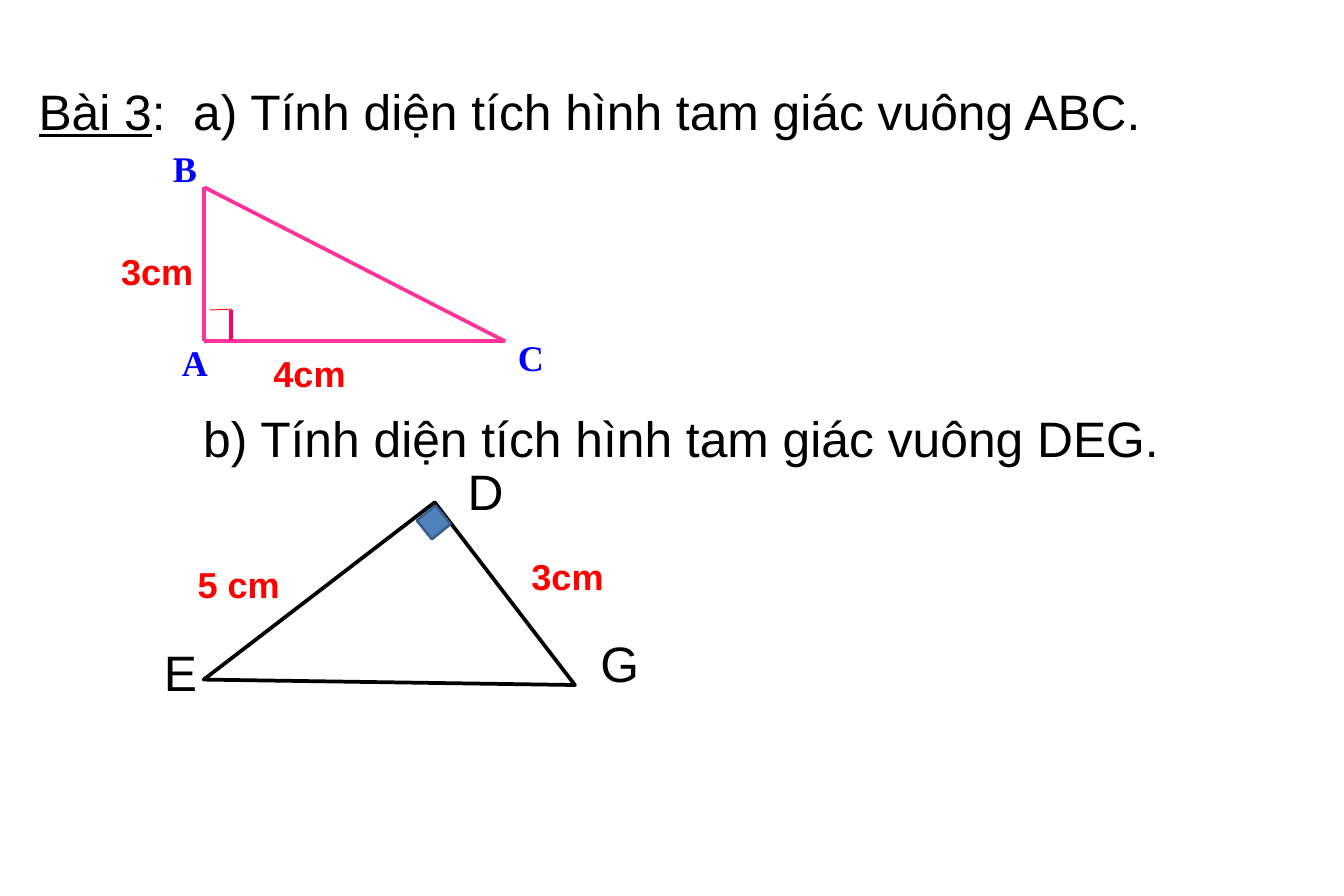
import pptx
import pptx.util
import pptx.dml.color
import pptx.enum.shapes
import pptx.enum.text
from dataclasses import dataclass
from lxml import etree

Inches = pptx.util.Inches
Align = pptx.enum.text.PP_ALIGN
Anchor = pptx.enum.text.MSO_ANCHOR
Preset = pptx.enum.shapes.MSO_SHAPE


@dataclass(frozen=True)
class Theme:
    sans: str = "Arial"
    serif: str = "Times New Roman"
    text_size: int = 40
    label_size: int = 29
    black: str = "000000"
    white: str = "FFFFFF"
    vertex: str = "0000FF"
    measure: str = "FF0000"
    side: str = "FF3399"
    corner: str = "FF0066"
    diamond: str = "4F81BD"
    diamond_edge: str = "3A5F8C"
    side_width: float = 3
    edge_width: float = 2
    thin_width: float = 0.75


THEME = Theme()

HEADING = [("Bài 3", {"underline": True}), (":", {}), (" ", {"spacing": 11}),
           ("a) Tính diện tích hình tam giác vuông ABC.", {})]
HEADING_BOX = (0.33, 0.85, 14.08, 0.77)
PART_B = "b) Tính diện tích hình tam giác vuông DEG."
PART_B_BOX = (2.17, 4.5, 12.17, 0.77)

A, B, C = (2.28, 3.81), (2.28, 2.09), (5.64, 3.81)
ABC_SIDES = [(B, A), (A, C), (B, C)]
ABC_LABELS = [("B", (1.83, 1.59), Align.LEFT), ("A", (1.93, 3.75), Align.CENTER),
              ("C", (5.68, 3.69), Align.CENTER)]
ABC_LABEL_SIZE = (0.49, 0.59)
RIGHT_ANGLE = [((2.58, 3.46), (2.58, 3.79), THEME.corner, THEME.side_width),
               ((2.59, 3.45), (2.34, 3.46), THEME.measure, THEME.thin_width)]

DEG_LABELS = [("G", (6.56, 7.12, 0.44, 0.55), 0.14), ("E", (1.73, 7.21, 0.44, 0.58), 0.1),
              ("D", (5.09, 5.12, 0.66, 0.72), 0.1)]
DEG_SHAPES = [
    (Preset.RIGHT_TRIANGLE, (2.72, 6.33, 3.25, 2.57), 142.5,
     THEME.white, THEME.black, THEME.side_width),
    (Preset.DIAMOND, (4.65, 5.64, 0.38, 0.38), 5.9,
     THEME.diamond, THEME.diamond_edge, THEME.edge_width),
]
MEASURES = [("4cm", (2.83, 3.79, 1.25, 0.75)), ("3cm", (1.17, 2.66, 1.17, 0.72)),
            ("5 cm", (2.08, 6.16, 1.17, 0.72)), ("3cm", (5.75, 6.07, 1.17, 0.72))]


def rgb(color):
    return pptx.dml.color.RGBColor.from_string(color)


def add_span(para, text, size=THEME.text_size, color=THEME.black, font=THEME.sans,
             bold=False, underline=False, spacing=0):
    span = para.add_run()
    span.text = text
    span.font.size = pptx.util.Pt(size)
    span.font.color.rgb = rgb(color)
    span.font.name = font
    span.font.bold = bold
    span.font.underline = underline
    if spacing:
        span.font._element.set("spc", str(spacing * 100))


def set_frame(frame, anchor=Anchor.TOP, align=Align.LEFT, inset=0.1):
    frame.word_wrap = True
    frame.auto_size = pptx.enum.text.MSO_AUTO_SIZE.NONE
    frame.vertical_anchor = anchor
    frame.margin_left = frame.margin_right = Inches(inset)
    frame.margin_top = frame.margin_bottom = Inches(inset / 2)
    para = frame.paragraphs[0]
    para.alignment = align
    return para


def add_text(shapes, text, place, anchor=Anchor.TOP, align=Align.LEFT, inset=0.1, **style):
    box = shapes.add_textbox(*map(Inches, place))
    add_span(set_frame(box.text_frame, anchor, align, inset), text, **style)


def add_line(shapes, start, end, color, width):
    line = shapes.add_connector(pptx.enum.shapes.MSO_CONNECTOR.STRAIGHT,
                                *map(Inches, start + end))
    line.line.color.rgb = rgb(color)
    line.line.width = pptx.util.Pt(width)
    etree.SubElement(line._element.spPr, pptx.oxml.ns.qn("a:effectLst"))


def add_figure(shapes, preset, place, rotation, fill, edge, width):
    figure = shapes.add_shape(preset, *map(Inches, place))
    figure.rotation = rotation
    figure.shadow.inherit = False
    figure.fill.solid()
    figure.fill.fore_color.rgb = rgb(fill)
    figure.line.color.rgb = rgb(edge)
    figure.line.width = pptx.util.Pt(width)


def add_heading(page):
    title = page.shapes.title
    title.left, title.top, title.width, title.height = map(Inches, HEADING_BOX)
    para = set_frame(title.text_frame)
    for text, style in HEADING:
        add_span(para, text, **style)


def add_triangle_abc(page):
    group = page.shapes.add_group_shape()
    for start, end in ABC_SIDES:
        add_line(group.shapes, start, end, THEME.side, THEME.side_width)
    for text, corner, align in ABC_LABELS:
        add_text(group.shapes, text, corner + ABC_LABEL_SIZE, align=align, bold=True,
                 size=THEME.label_size, color=THEME.vertex, font=THEME.serif)
    for mark in RIGHT_ANGLE:
        add_line(page.shapes, *mark)


def add_triangle_deg(page):
    for figure in DEG_SHAPES:
        add_figure(page.shapes, *figure)
    for text, place, inset in DEG_LABELS:
        add_text(page.shapes, text, place, anchor=Anchor.MIDDLE, align=Align.CENTER,
                 inset=inset)


def main():
    deck = pptx.Presentation()
    deck.slide_width, deck.slide_height = Inches(15), Inches(10)
    page = deck.slides.add_slide(deck.slide_layouts[5])
    add_heading(page)
    add_triangle_abc(page)
    add_text(page.shapes, PART_B, PART_B_BOX)
    add_triangle_deg(page)
    for text, place in MEASURES:
        add_text(page.shapes, text, place, anchor=Anchor.MIDDLE, align=Align.CENTER,
                 size=THEME.label_size, color=THEME.measure, bold=True)
    deck.save("out.pptx")


if __name__ == "__main__":
    main()
